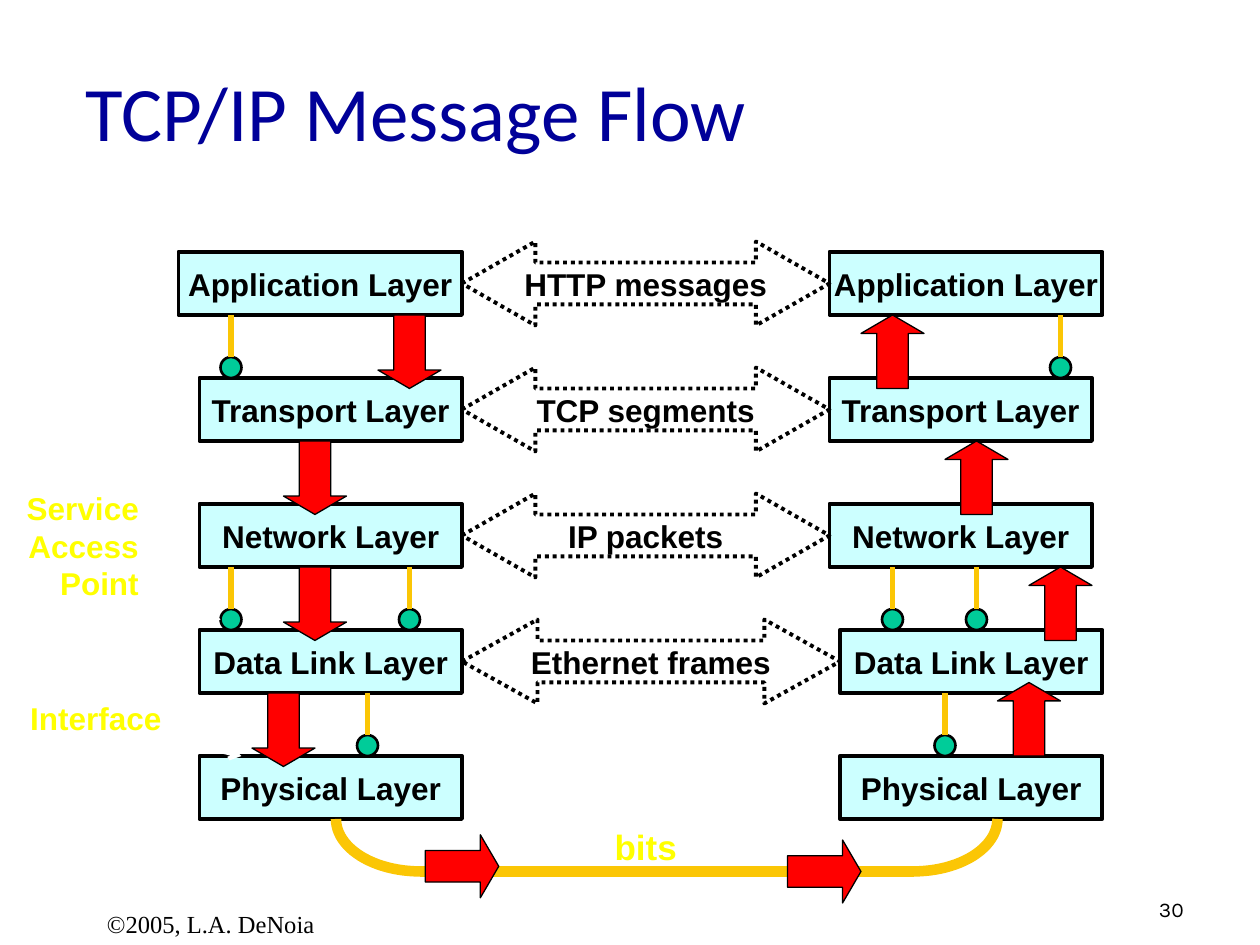
from math import cos, pi, sin

from lxml.etree import SubElement
from pptx import Presentation
from pptx.dml.color import RGBColor
from pptx.enum.dml import MSO_LINE
from pptx.enum.shapes import MSO_CONNECTOR, MSO_SHAPE
from pptx.enum.text import MSO_ANCHOR as Anchor, MSO_AUTO_SIZE, PP_ALIGN as Align
from pptx.oxml.ns import qn
from pptx.util import Inches, Pt

BLACK, WHITE, YELLOW = "000000", "FFFFFF", "FFFF00"
NAVY, PALE, GREEN, GOLD, RED = "000099", "CCFFFF", "00CC99", "FBC605", "FF0000"
LAYER_PITCH, LAYER_HEIGHT = 12, 6

# Each layer: name, column offset, width, access points below it,
# and the (column, row) offset of the message arrow from its lower edge
SENDER = [
    ("Application Layer", -2, 27, [3], (17, 0)),
    ("Transport Layer", 0, 25, [], (8, 0)),
    ("Network Layer", 0, 25, [3, 20], (8, 0)),
    ("Data Link Layer", 0, 25, [16], (5, 0)),
    ("Physical Layer", 0, 25, [], None),
]
RECEIVER = [
    ("Application Layer", 0, 26, [22], (3, 0)),
    ("Transport Layer", 0, 25, [], (11, 0)),
    ("Network Layer", 0, 25, [6, 14], (19, 0)),
    ("Data Link Layer", 1, 25, [11], (16, -1)),
    ("Physical Layer", 1, 25, [], None),
]
# Each exchange: label, width, arrowhead share
EXCHANGES = [
    ("HTTP messages", 35, 0.875),
    ("TCP segments", 35, 0.875),
    ("IP packets", 35, 0.875),
    ("Ethernet frames", 36, 0.9),
]


def grid(units):
    """Twelve grid units to the inch."""
    return Inches(units / 12)


def color(hex_value):
    return RGBColor.from_string(hex_value)


def write(frame, text, size, font, hex_value, bold=False, align=Align.LEFT):
    paragraph = frame.paragraphs[0]
    paragraph.alignment = align
    run = paragraph.add_run()
    run.text = text
    run.font.size, run.font.name, run.font.bold = Pt(size), font, bold
    run.font.color.rgb = color(hex_value)


def add_figure(slide, kind, left, top, width, height, fill, weight, label=None):
    figure = slide.shapes.add_shape(kind, *map(grid, (left, top, width, height)))
    figure.shadow.inherit = False
    figure.fill.solid()
    figure.fill.fore_color.rgb = color(fill)
    figure.line.color.rgb = color(BLACK)
    figure.line.width = Pt(weight)
    if label:
        frame = figure.text_frame
        frame.word_wrap = False
        frame.vertical_anchor = Anchor.MIDDLE
        write(frame, label, 18, "Arial", BLACK, True, Align.CENTER)
    return figure


def add_line(slide, start, end, hex_value, weight, arrow=False):
    line = slide.shapes.add_connector(
        MSO_CONNECTOR.STRAIGHT, *map(grid, (*start, *end)))
    line.line.color.rgb = color(hex_value)
    line.line.width = Pt(weight)
    if arrow:
        SubElement(line.line._get_or_add_ln(), qn("a:tailEnd"), type="arrow")
    SubElement(line._element.spPr, qn("a:effectLst"))


def add_text(slide, box, text, size, font, hex_value, bold=False, align=Align.LEFT):
    frame = slide.shapes.add_textbox(*map(Inches, box)).text_frame
    frame.word_wrap = True
    write(frame, text, size, font, hex_value, bold, align)
    return frame


def add_message_arrow(slide, left, top, rotation):
    arrow = add_figure(slide, MSO_SHAPE.DOWN_ARROW, left, top, 6, 7, RED, 0.75)
    arrow.adjustments[0], arrow.adjustments[1] = 0.5, 0.292
    arrow.rotation = rotation


def add_heading(slide, left, top, width, height):
    title = slide.shapes.title
    title.left, title.top, title.width, title.height = map(
        Inches, (left, top, width, height))
    title.text_frame.vertical_anchor = Anchor.MIDDLE
    write(title.text_frame, "TCP/IP Message Flow", 44, "Calibri", NAVY)


def add_host(slide, left, top, layers, rotation):
    """A stack of layers, then its access points and message arrows."""
    for row, (name, offset, width, _, _) in enumerate(layers):
        add_figure(slide, MSO_SHAPE.RECTANGLE, left + offset,
                   top + row * LAYER_PITCH, width, LAYER_HEIGHT, PALE, 2.25, name)
    for row, (_, _, _, access_points, message) in enumerate(layers):
        lower_edge = top + row * LAYER_PITCH + LAYER_HEIGHT
        for offset in access_points:
            column = left + offset
            add_figure(slide, MSO_SHAPE.OVAL, column - 1, lower_edge + 4,
                       2, 2, GREEN, 1.5)
            add_line(slide, (column, lower_edge + 4), (column, lower_edge), GOLD, 3)
        if message:
            add_message_arrow(slide, left + message[0],
                              lower_edge + message[1], rotation)


def add_exchanges(slide, left, top):
    for row, (label, width, head) in enumerate(EXCHANGES):
        arrow = add_figure(slide, MSO_SHAPE.LEFT_RIGHT_ARROW, left,
                           top + row * LAYER_PITCH, width, 8, WHITE, 2.25, label)
        arrow.adjustments[0], arrow.adjustments[1] = 0.5, head
        arrow.line.dash_style = MSO_LINE.ROUND_DOT


def add_bend(slide, center, top, reach, depth):
    """Quarter ellipse from the wire's end up to a host; reach is signed."""
    steps = 24
    points = [(grid(center + reach * sin(i * pi / 2 / steps)),
               grid(top + depth * cos(i * pi / 2 / steps)))
              for i in range(steps + 1)]
    builder = slide.shapes.build_freeform(*points[0])
    builder.add_line_segments(points[1:], close=False)
    bend = builder.convert_to_shape()
    bend.shadow.inherit = False
    bend.fill.background()
    bend.line.color.rgb = color(GOLD)
    bend.line.width = Pt(6)


def add_wire(slide, left, top, width, depth):
    bend = 8
    start, end = left + bend, left + width - bend
    add_bend(slide, start, top, -bend, depth)
    add_line(slide, (start, top + depth), (end, top + depth), GOLD, 6)
    add_bend(slide, end, top, bend, depth)
    for column, row in [(9, 1), (43.5, 1.5)]:
        add_message_arrow(slide, left + column, top + row, 270)


def add_callouts(slide):
    for text, box, size, align in [
        ("Service Access Point", (0, 3.83, 1.2, 1), 18, Align.RIGHT),
        ("bits", (4, 6.5, 2.25, 0.43), 20, Align.CENTER),
        ("Interface", (0, 5.5, 1.38, 0.4), 18, Align.RIGHT),
    ]:
        frame = add_text(slide, box, text, size, "Arial", YELLOW, True, align)
        frame.auto_size = MSO_AUTO_SIZE.SHAPE_TO_FIT_TEXT
    for column, row in [(12, 57), (14, 70)]:
        add_line(slide, (column, row), (column + 9, row + 2), WHITE, 2.25, True)


def add_footer(slide):
    credit = add_text(slide, (0.75, 6.83, 2.08, 0.62), "©2005, L.A. DeNoia",
                      14, "Times New Roman", BLACK)
    credit.vertical_anchor = Anchor.BOTTOM
    credit.margin_bottom = 0
    add_text(slide, (9.1, 7.07, 0.74, 0.3), "30", 12, "Karla", BLACK)


def main():
    deck = Presentation()
    deck.slide_width, deck.slide_height = Inches(10), Inches(7.5)
    slide = deck.slides.add_slide(deck.slide_layouts[5])
    add_heading(slide, 0.58, 0.25, 8.5, 1.25)
    add_footer(slide)
    add_host(slide, 19, 24, SENDER, 0)
    add_host(slide, 79, 24, RECEIVER, 180)
    add_exchanges(slide, 44, 23)
    add_wire(slide, 32, 78, 63, 5)
    add_callouts(slide)
    deck.save("out.pptx")


if __name__ == "__main__":
    main()
